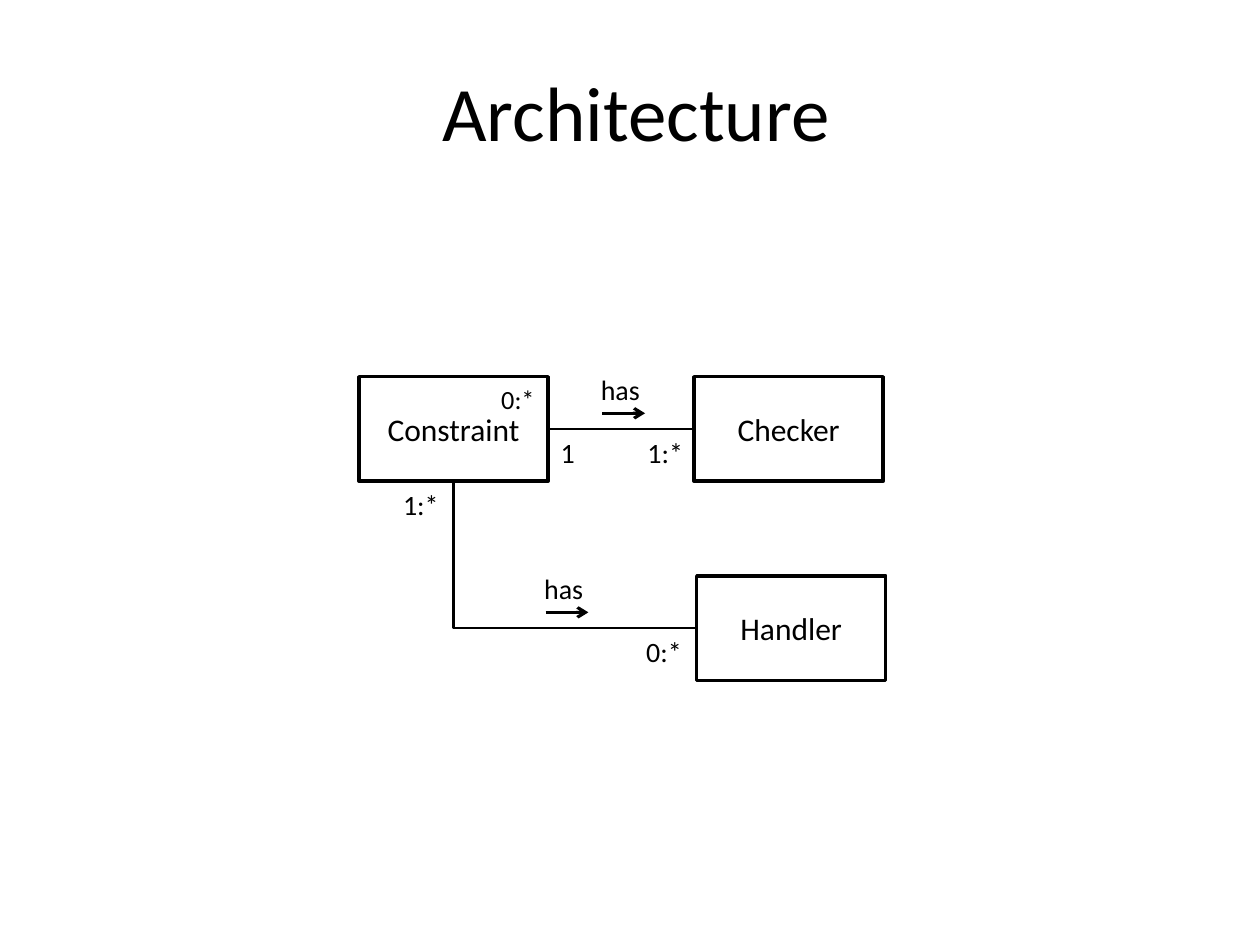
"""Build the architecture slide: three classes and their relations."""
import dataclasses

import pptx
import pptx.dml.color
import pptx.enum.shapes
import pptx.enum.text
import pptx.oxml.ns
import pptx.oxml.xmlchemy
import pptx.util

Inches = pptx.util.Inches
Pt = pptx.util.Pt
Align = pptx.enum.text.PP_ALIGN
Anchor = pptx.enum.text.MSO_ANCHOR
Link = pptx.enum.shapes.MSO_CONNECTOR
make = pptx.oxml.xmlchemy.OxmlElement
qn = pptx.oxml.ns.qn


@dataclasses.dataclass(frozen=True)
class Theme:
    font: str = "Calibri"
    ink: pptx.dml.color.RGBColor = pptx.dml.color.RGBColor(0, 0, 0)
    title: float = 44
    name: float = 18
    label: float = 16
    small: float = 15
    frame: float = 2
    line: float = 1.5
    arrow: float = 1.75


THEME = Theme()
BOX_W, BOX_H = 1.5, 0.83
LABEL_H = 0.37


def write(shape, text, size, align=Align.LEFT, anchor=Anchor.TOP, wrap=True):
    frame = shape.text_frame
    frame.word_wrap = wrap
    frame.vertical_anchor = anchor
    para = frame.paragraphs[0]
    para.text = text
    para.alignment = align
    para.font.name = THEME.font
    para.font.size = Pt(size)
    para.font.color.rgb = THEME.ink


def add_title(slide, text):
    box = slide.shapes.add_textbox(Inches(0.55), Inches(0.25), Inches(9), Inches(1.25))
    write(box, text, THEME.title, Align.CENTER, Anchor.MIDDLE)


def add_class(slide, text, x, y):
    kind = pptx.enum.shapes.MSO_SHAPE.RECTANGLE
    box = slide.shapes.add_shape(kind, Inches(x), Inches(y), Inches(BOX_W), Inches(BOX_H))
    box.shadow.inherit = False
    box.fill.background()
    box.line.color.rgb = THEME.ink
    box.line.width = Pt(THEME.frame)
    write(box, text, THEME.name, Align.CENTER, Anchor.MIDDLE)


def add_label(slide, text, x, y, width=0.49, size=THEME.label):
    box = slide.shapes.add_textbox(Inches(x), Inches(y), Inches(width), Inches(LABEL_H))
    write(box, text, size, wrap=False)


def add_line(slide, start, end, width=THEME.line, kind=Link.STRAIGHT):
    points = [Inches(value) for value in (*start, *end)]
    line = slide.shapes.add_connector(kind, *points)
    line.line.color.rgb = THEME.ink
    line.line.width = Pt(width)
    props = line.element.spPr
    props.append(make("a:effectLst"))
    return props


def add_elbow(slide, start, end):
    mid_x, mid_y = (start[0] + end[0]) / 2, (start[1] + end[1]) / 2
    half_w, half_h = (end[1] - start[1]) / 2, (end[0] - start[0]) / 2
    first = (mid_x + half_w, mid_y - half_h)
    last = (mid_x - half_w, mid_y + half_h)
    props = add_line(slide, first, last, kind=Link.ELBOW)
    props.find(qn("a:xfrm")).set("rot", str(270 * 60000))
    props.find(qn("a:prstGeom")).set("prst", "bentConnector2")


def add_verb(slide, text, x, y):
    add_label(slide, text, x, y, 0.51)
    base = y + LABEL_H
    props = add_line(slide, (x + 0.11, base), (x + 0.45, base), THEME.arrow)
    tail = make("a:tailEnd")
    tail.set("type", "arrow")
    props.find(qn("a:ln")).append(tail)


def main():
    deck = pptx.Presentation()
    deck.slide_width, deck.slide_height = Inches(10), Inches(7.5)
    slide = deck.slides.add_slide(deck.slide_layouts[6])
    add_title(slide, "Architecture")

    left, top = 2.85, 2.99
    check_x, hand_x, hand_y = 5.51, 5.53, 4.57
    right, foot = left + BOX_W, top + BOX_H
    mid, row, low = left + BOX_W / 2, top + BOX_H / 2, hand_y + BOX_H / 2

    add_class(slide, "Constraint", left, top)
    add_label(slide, "0:*", 3.88, top, 0.47, THEME.small)
    add_class(slide, "Checker", check_x, top)
    add_class(slide, "Handler", hand_x, hand_y)

    add_line(slide, (right, row), (check_x, row))
    add_label(slide, "1", right, row, 0.32)
    add_label(slide, "1:*", 5.04, row)
    add_verb(slide, "has", 4.67, 2.91)

    add_elbow(slide, (mid, foot), (hand_x, low))
    add_verb(slide, "has", 4.22, 4.49)
    add_label(slide, "1:*", 3.1, foot)
    add_label(slide, "0:*", 5.03, low)
    deck.save("out.pptx")


if __name__ == "__main__":
    main()
